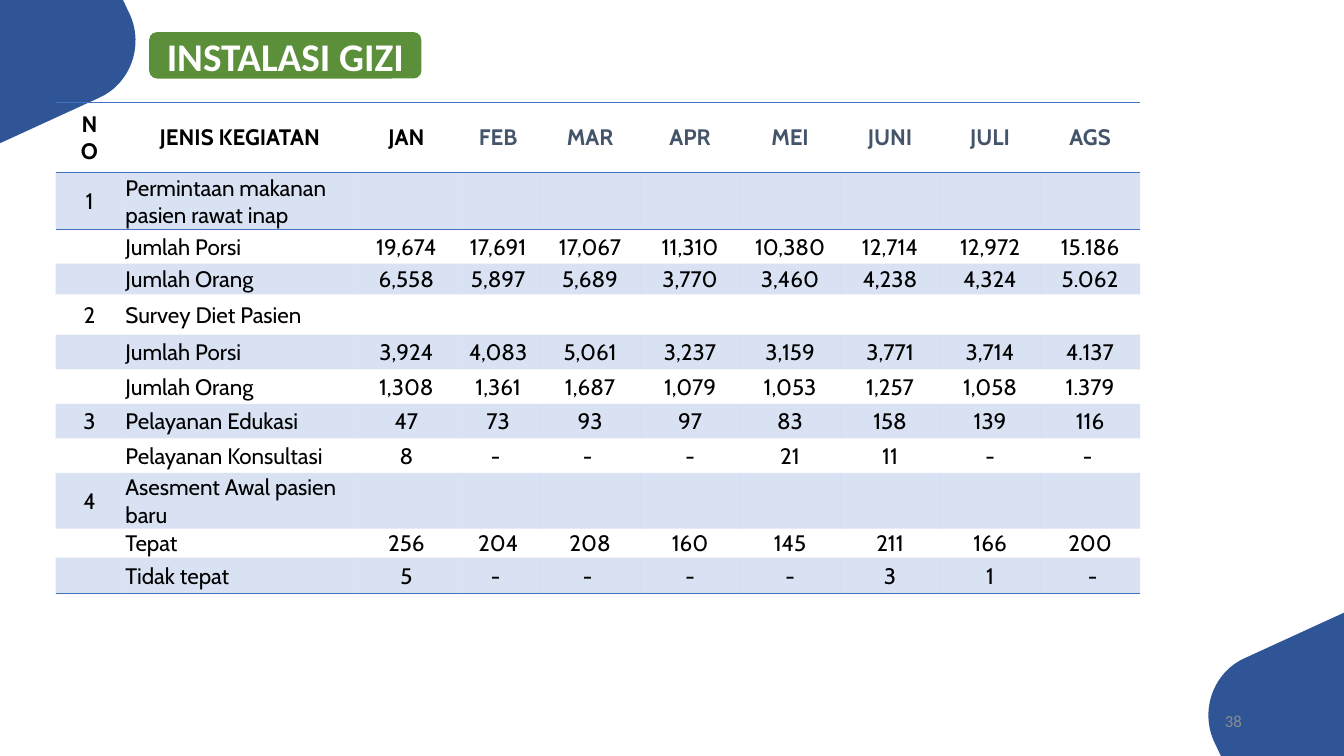
from lxml.etree import SubElement
from pptx import Presentation
from pptx.dml.color import RGBColor
from pptx.enum.shapes import MSO_SHAPE
from pptx.enum.text import MSO_ANCHOR, MSO_AUTO_SIZE, PP_ALIGN
from pptx.oxml import parse_xml
from pptx.oxml.ns import nsdecls, qn
from pptx.util import Cm, Pt

NAVY = RGBColor(0x2F, 0x55, 0x97)
BLUE = RGBColor(0x44, 0x72, 0xC4)
SLATE = RGBColor(0x44, 0x54, 0x6A)
GREEN = RGBColor(0x5C, 0x8F, 0x3A)
GRAY = RGBColor(0x8C, 0x8C, 0x8C)
BLACK = RGBColor(0, 0, 0)
WHITE = RGBColor(0xFF, 0xFF, 0xFF)
NO_STYLE = "{2D5ABB26-0587-4C30-8999-92F81FD0307C}"
WIDTH, HEIGHT = 33.87, 19.05


def write_text(text_frame, text, alignment, **font_values):
    """Put one formatted paragraph, vertically centred, in a text frame."""
    text_frame.vertical_anchor = MSO_ANCHOR.MIDDLE
    paragraph = text_frame.paragraphs[0]
    paragraph.alignment = alignment
    run = paragraph.add_run()
    run.text = text
    color = font_values.pop("color")
    for name, value in font_values.items():
        setattr(run.font, name, value)
    run.font.color.rgb = color


def add_border(cell, side):
    """Draw a thin blue line on one side of a table cell."""
    line = parse_xml(
        f'<a:{side} {nsdecls("a")} w="12700"><a:solidFill>'
        f'<a:srgbClr val="{BLUE}"/></a:solidFill></a:{side}>')
    cell._tc.get_or_add_tcPr().insert(0, line)


presentation = Presentation()
presentation.slide_width = Cm(WIDTH)
presentation.slide_height = Cm(HEIGHT)
slide = presentation.slides.add_slide(presentation.slide_layouts[5])

# Corner decorations: one outline with a rounded tip, turned half a circle
tip = [(3.28, 0.38), (3.63, 1.17), (3.28, 2.11), (2.51, 2.46)]
outline = [(0, 0), (3.1, 0)]
STEPS = 24
for step in range(STEPS + 1):
    t = step / STEPS
    weights = [(1 - t) ** 3, 3 * t * (1 - t) ** 2, 3 * t ** 2 * (1 - t), t ** 3]
    outline.append(tuple(
        sum(weight * point[axis] for weight, point in zip(weights, tip))
        for axis in (0, 1)))
outline.append((0, 3.61))
turned_outline = [(WIDTH - x, HEIGHT - y) for x, y in outline]

for corner in (turned_outline, outline):
    points = [(Cm(x), Cm(y)) for x, y in corner]
    builder = slide.shapes.build_freeform(*points[0])
    builder.add_line_segments(points[1:], close=True)
    shape = builder.convert_to_shape()
    shape.shadow.inherit = False
    shape.fill.solid()
    shape.fill.fore_color.rgb = NAVY
    shape.line.fill.background()

# Activity table
rows = [
    ("NO", "JENIS KEGIATAN", "JAN", "FEB", "MAR", "APR", "MEI", "JUNI", "JULI", "AGS"),
    ("1", "Permintaan makanan pasien rawat inap"),
    ("", "Jumlah Porsi", "19,674", "17,691", "17,067", "11,310", "10,380",
     "12,714", "12,972", "15.186"),
    ("", "Jumlah Orang", "6,558", "5,897", "5,689", "3,770", "3,460",
     "4,238", "4,324", "5.062"),
    ("2", "Survey Diet Pasien"),
    ("", "Jumlah Porsi", "3,924", "4,083", "5,061", "3,237", "3,159",
     "3,771", "3,714", "4.137"),
    ("", "Jumlah Orang", "1,308", "1,361", "1,687", "1,079", "1,053",
     "1,257", "1,058", "1.379"),
    ("3", "Pelayanan Edukasi", "47", "73", "93", "97", "83", "158", "139", "116"),
    ("", "Pelayanan Konsultasi", "8", "- ", "- ", "-", "21", "11", "-", "- "),
    ("4", "Asesment Awal pasien baru"),
    ("", "Tepat", "256", "204", "208", "160", "145", "211", "166", "200"),
    ("", "Tidak tepat", "5", "- ", "- ", "-", "-", "3", "1", " -"),
]
column_widths = [1.71, 5.87, 2.52, 2.11] + [2.52] * 6
row_heights = [1.74, 1.42, 0.87, 0.77, 1.02, 0.87, 0.87, 0.87, 0.87, 1.4, 0.73, 0.91]

table = slide.shapes.add_table(
    len(rows), len(column_widths), Cm(1.4), Cm(2.59),
    Cm(sum(column_widths)), Cm(sum(row_heights))).table
table._tbl.tblPr.find(qn("a:tableStyleId")).text = NO_STYLE
for column, width in zip(table.columns, column_widths):
    column.width = Cm(width)
for row, height in zip(table.rows, row_heights):
    row.height = Cm(height)

last_row = len(rows) - 1
for row_index, values in enumerate(rows):
    is_header = row_index == 0
    for column_index in range(len(column_widths)):
        cell = table.cell(row_index, column_index)
        side_margin = 0.5 if is_header else 0.05 if column_index < 2 else 0.03
        margins = {
            "margin_left": side_margin,
            "margin_right": side_margin,
            "margin_top": 0.2 if is_header else 0.04,
            "margin_bottom": 0.2 if is_header else 0,
        }
        for name, value in margins.items():
            setattr(cell, name, Cm(value))
        cell.vertical_anchor = MSO_ANCHOR.MIDDLE

        text = values[column_index] if column_index < len(values) else ""
        if text:
            left_aligned = column_index == 1 and not is_header
            write_text(
                cell.text_frame, text,
                PP_ALIGN.LEFT if left_aligned else PP_ALIGN.CENTER,
                name="Cabin", size=Pt(16), bold=is_header,
                color=SLATE if is_header and column_index > 2 else BLACK)
            cell.vertical_anchor = MSO_ANCHOR.MIDDLE
        else:
            # Keeps empty cells from stretching the row
            paragraph = cell.text_frame.paragraphs[0]
            SubElement(paragraph._p, qn("a:endParaRPr"), sz="1200")

        # Light bands on every second row
        if row_index % 2:
            cell.fill.solid()
            cell.fill.fore_color.rgb = BLUE
            band_color = cell._tc.tcPr.find(".//" + qn("a:srgbClr"))
            SubElement(band_color, qn("a:alpha"), val="20000")
        else:
            cell.fill.background()
        if row_index in (0, last_row):
            add_border(cell, "lnB")
        if row_index in (0, 1):
            add_border(cell, "lnT")

# Title on its green badge
frame = (Cm(3.76), Cm(0.81), Cm(6.86), Cm(1.17))
badge = slide.shapes.add_shape(MSO_SHAPE.ROUNDED_RECTANGLE, *frame)
badge.shadow.inherit = False
badge.fill.solid()
badge.fill.fore_color.rgb = GREEN
badge.line.fill.background()

title = slide.shapes.title
title.left, title.top, title.width, title.height = frame
title.text_frame.auto_size = MSO_AUTO_SIZE.NONE
title.text_frame.margin_top = title.text_frame.margin_bottom = 0
write_text(title.text_frame, "INSTALASI GIZI", PP_ALIGN.CENTER,
           name="Calibri", size=Pt(28), bold=True, color=WHITE)
badge._element.addnext(title._element)

# Page number
page_number = slide.shapes.add_textbox(Cm(23.93), Cm(17.65), Cm(7.62), Cm(1.02))
page_number.text_frame.word_wrap = True
write_text(page_number.text_frame, "38", PP_ALIGN.RIGHT,
           name="Calibri", size=Pt(12), color=GRAY)

presentation.save("out.pptx")
